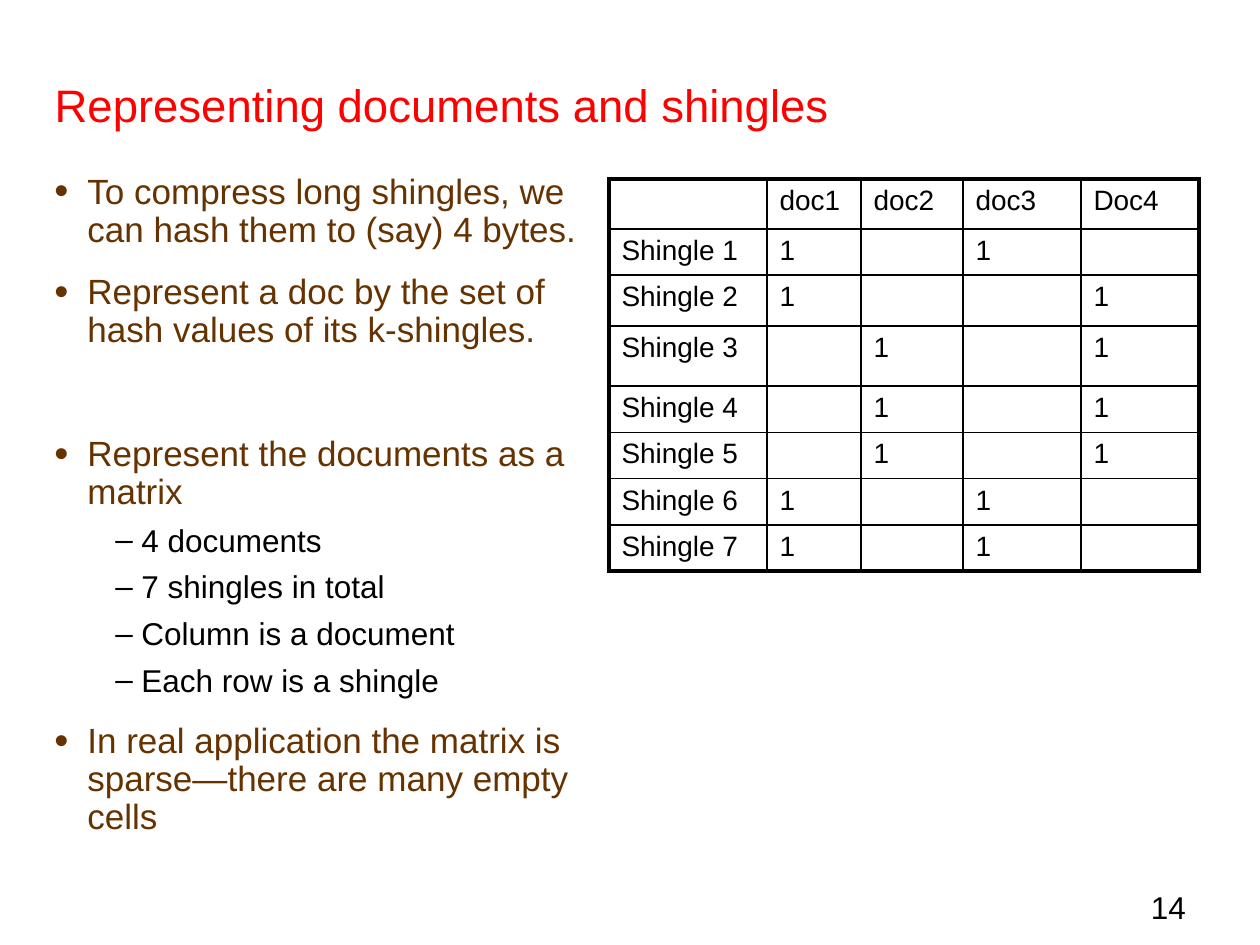
from lxml.etree import SubElement
from pptx import Presentation
from pptx.dml.color import RGBColor
from pptx.enum.text import MSO_ANCHOR as Anchor, MSO_AUTO_SIZE as AutoSize, PP_ALIGN as Align
from pptx.oxml.ns import qn
from pptx.util import Emu, Pt

COLORS = {"title": "FF0000", "body": "663300", "text": "000000"}
LEVELS = [
    {"size": 20, "color": "body", "margin": 33, "hanging": 33, "before": 14, "bullet": "•", "bullet_size": 115},
    {"size": 18, "color": "text", "margin": 87, "hanging": 26, "before": 7.2, "bullet": "–", "bullet_size": 100},
]
BODY = [
    (0, "To compress long shingles, we can hash them to (say) 4 bytes.", 0),
    (0, "Represent a doc by the set of hash values of its k-shingles.", None),
    (0, "Represent the documents as a matrix", 49.6),
    (1, "4 documents", None),
    (1, "7 shingles in total", None),
    (1, "Column is a document", None),
    (1, "Each row is a shingle", None),
    (0, "In real application the matrix is sparse—there are many empty cells", None),
]
DOCUMENTS = ["doc1", "doc2", "doc3", "Doc4"]
MATRIX = ["1010", "1001", "0101", "0101", "0101", "1010", "1010"]


def px(value):
    return Emu(round(value * 914400 / 126))


class SlideBuilder:
    font = "Arial"

    def __init__(self, presentation):
        self.slide = presentation.slides.add_slide(presentation.slide_layouts[5])

    def place(self, shape, left, top, width, height):
        shape.left, shape.top = px(left), px(top)
        shape.width, shape.height = px(width), px(height)

    def run(self, paragraph, text, size, color):
        run = paragraph.add_run()
        run.text = text
        run.font.name = self.font
        run.font.size = Pt(size)
        run.font.color.rgb = RGBColor.from_string(COLORS[color])

    def title(self, text, *box):
        shape = self.slide.shapes.title
        self.place(shape, *box)
        frame = shape.text_frame
        frame.auto_size = AutoSize.NONE
        frame.vertical_anchor = Anchor.MIDDLE
        frame.paragraphs[0].alignment = Align.LEFT
        self.run(frame.paragraphs[0], text, 26, "title")

    def text_frame(self, *box):
        shape = self.slide.shapes.add_textbox(*map(px, box))
        shape.text_frame.word_wrap = True
        return shape.text_frame

    def number(self, text, *box):
        paragraph = self.text_frame(*box).paragraphs[0]
        paragraph.alignment = Align.RIGHT
        self.run(paragraph, text, 18, "text")

    def bullets(self, items, *box):
        frame = self.text_frame(*box)
        for index, (level, text, before) in enumerate(items):
            style = LEVELS[level]
            paragraph = frame.add_paragraph() if index else frame.paragraphs[0]
            paragraph.level = level
            paragraph.line_spacing = 0.9
            paragraph.space_before = Pt(style["before"] if before is None else before)
            properties = paragraph._p.get_or_add_pPr()
            properties.set("marL", str(px(style["margin"])))
            properties.set("indent", str(-px(style["hanging"])))
            SubElement(properties, qn("a:buSzPct"), val=str(style["bullet_size"] * 1000))
            SubElement(properties, qn("a:buFont"), typeface=self.font)
            SubElement(properties, qn("a:buChar"), char=style["bullet"])
            self.run(paragraph, text, style["size"], style["color"])

    def borders(self, cell, outer):
        properties = cell._tc.get_or_add_tcPr()
        for side in "LRTB":
            width = Pt(2.25 if side in outer else 1)
            line = SubElement(properties, qn("a:ln" + side), w=str(width))
            fill = SubElement(line, qn("a:solidFill"))
            SubElement(fill, qn("a:srgbClr"), val=COLORS["text"])

    def table(self, rows, left, top, widths, heights):
        box = (left, top, sum(widths), sum(heights))
        table = self.slide.shapes.add_table(len(rows), len(widths), *map(px, box)).table
        table.first_row = table.horz_banding = False
        for column, width in zip(table.columns, widths):
            column.width = px(width)
        for row, height in zip(table.rows, heights):
            row.height = px(height)
        last_row, last_column = len(heights) - 1, len(widths) - 1
        for row, values in enumerate(rows):
            for column, text in enumerate(values):
                cell = table.cell(row, column)
                edges = {"L": column == 0, "R": column == last_column, "T": row == 0, "B": row == last_row}
                self.borders(cell, [side for side, is_outer in edges.items() if is_outer])
                cell.fill.background()
                paragraph = cell.text_frame.paragraphs[0]
                if text:
                    self.run(paragraph, text, 16, "text")
                else:
                    SubElement(paragraph._p, qn("a:endParaRPr"), sz="1600")


def main():
    presentation = Presentation()
    presentation.slide_width, presentation.slide_height = px(1260), px(945)
    builder = SlideBuilder(presentation)
    builder.number("14 ", 441, 882, 766, 42)
    builder.title("Representing documents and shingles", 42, 73, 1144, 63)
    builder.bullets(BODY, 42, 168, 567, 724)
    rows = [[""] + DOCUMENTS]
    for index, flags in enumerate(MATRIX, 1):
        rows.append([f"Shingle {index}"] + ["1" if flag == "1" else "" for flag in flags])
    builder.table(rows, 609, 179, [158, 94, 102, 118, 118], [50, 46, 51, 60] + [38] * 4)
    presentation.save("out.pptx")


if __name__ == "__main__":
    main()
